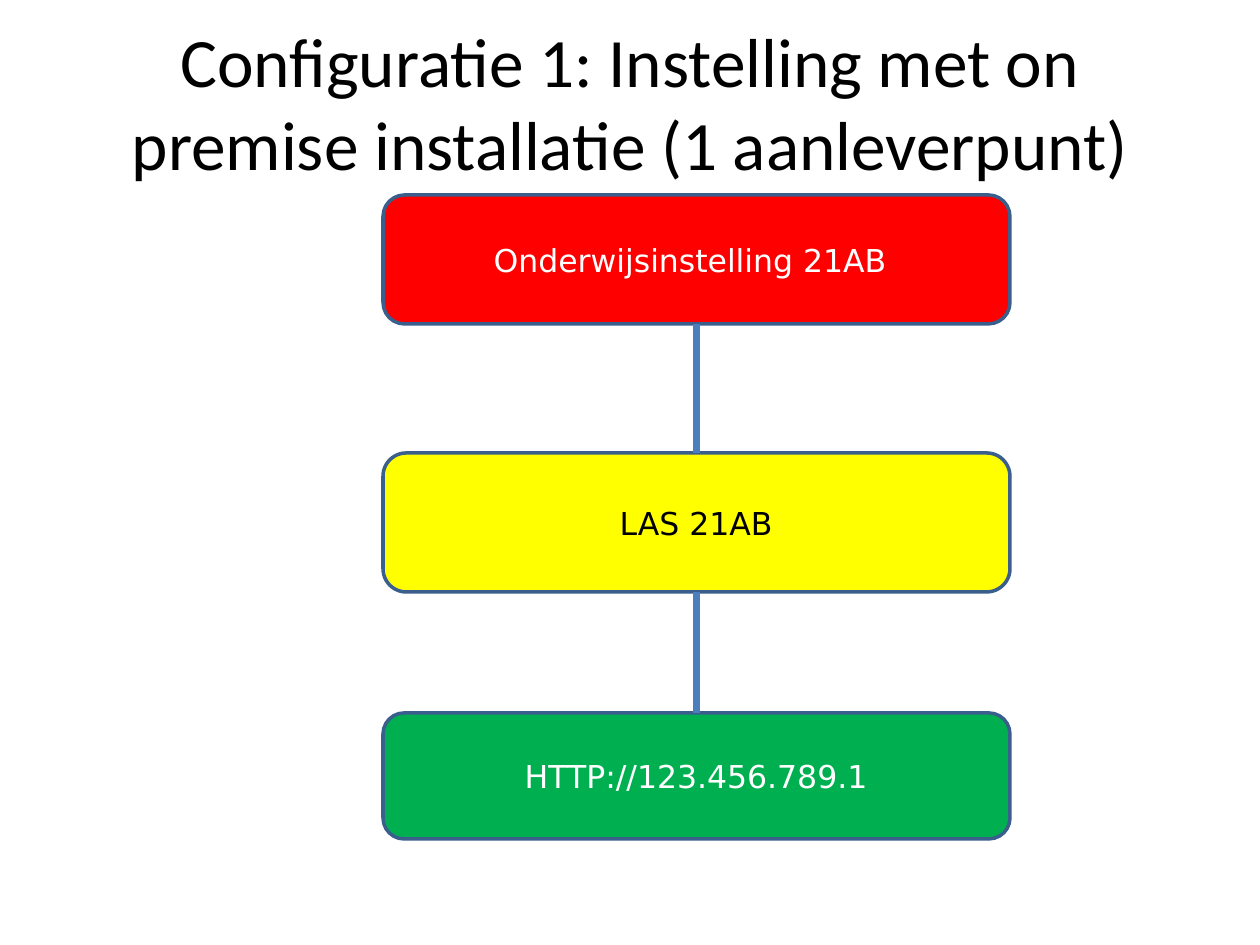
from lxml.etree import SubElement
from pptx import Presentation
from pptx.dml.color import RGBColor
from pptx.enum.shapes import MSO_CONNECTOR, MSO_SHAPE
from pptx.enum.text import MSO_ANCHOR, MSO_AUTO_SIZE, PP_ALIGN
from pptx.oxml.ns import qn
from pptx.util import Pt

PX = 914400 // 126
COLORS = {
    "red": "FF0000", "yellow": "FFFF00", "green": "00B050",
    "border": "3A5F8C", "link": "4B7EBC",
    "black": "000000", "white": "FFFFFF",
}


def rgb(name):
    return RGBColor.from_string(COLORS[name])


def add_text(tf, text, font, size, color):
    tf.word_wrap = True
    tf.auto_size = MSO_AUTO_SIZE.NONE
    tf.vertical_anchor = MSO_ANCHOR.MIDDLE
    p = tf.paragraphs[0]
    p.alignment = PP_ALIGN.CENTER
    r = p.add_run()
    r.text = text
    r.font.name = font
    r.font.size = Pt(size)
    r.font.color.rgb = rgb(color)


prs = Presentation()
prs.slide_width = 1260 * PX
prs.slide_height = 945 * PX
s = prs.slides.add_slide(prs.slide_layouts[5])

title = s.shapes.title
title.left, title.top, title.width, title.height = 63 * PX, 38 * PX, 1134 * PX, 127 * PX
add_text(title.text_frame,
         "Configuratie 1: Instelling met on premise installatie (1 aanleverpunt)",
         "Calibri", 39.6, "black")

levels = [
    ("Onderwijsinstelling 21AB", 195, 129, "red", "white", 25),
    ("LAS 21AB", 453, 139, "yellow", "black", 13),
    ("HTTP://123.456.789.1", 713, 126, "green", "white", 13),
]
boxes = []
for text, top, height, fill, color, inset in levels:
    sp = s.shapes.add_shape(MSO_SHAPE.ROUNDED_RECTANGLE,
                            383 * PX, top * PX, 627 * PX, height * PX)
    sp.shadow.inherit = False
    sp.fill.solid()
    sp.fill.fore_color.rgb = rgb(fill)
    sp.line.color.rgb = rgb("border")
    sp.line.width = Pt(2)
    sp.text_frame.margin_right = inset * PX
    add_text(sp.text_frame, text, "DejaVu Sans", 18, color)
    boxes.append(sp)

for upper, lower in zip(boxes, boxes[1:]):
    link = s.shapes.add_connector(MSO_CONNECTOR.STRAIGHT, 0, 0, 0, 0)
    link.begin_connect(upper, 2)
    link.end_connect(lower, 0)
    link.line.color.rgb = rgb("link")
    link.line.width = Pt(4)
    SubElement(link._element.spPr, qn("a:effectLst"))

prs.save("out.pptx")
